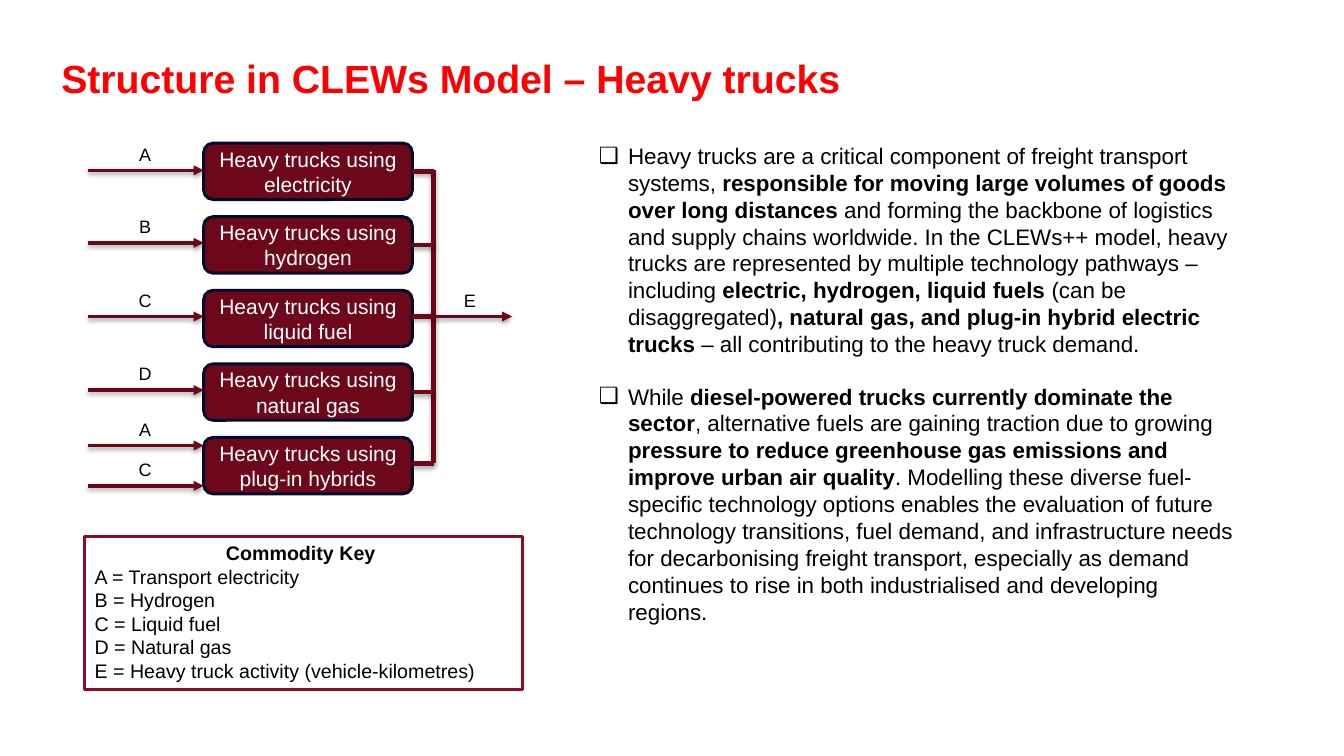
from lxml.etree import SubElement
from pptx import Presentation
from pptx.dml.color import RGBColor
from pptx.enum.shapes import MSO_CONNECTOR as CONN, MSO_SHAPE as SHAPE
from pptx.enum.text import MSO_ANCHOR as ANCHOR, MSO_AUTO_SIZE as FIT, PP_ALIGN as ALIGN
from pptx.oxml.ns import qn
from pptx.util import Pt

PX = 9144
COLORS = {
    "title": "FF0000",
    "text": "000000",
    "white": "FFFFFF",
    "maroon": "6C0819",
    "navy": "000D2C",
    "key": "910C22",
}


def rgb(name):
    return RGBColor.from_string(COLORS[name])


def sub(parent, tag, **attrs):
    return SubElement(parent, qn(tag), attrs)


class Deck:
    font = "Arial"

    def __init__(self, width, height):
        self.prs = Presentation()
        self.prs.slide_width = width * PX
        self.prs.slide_height = height * PX
        self.s = self.prs.slides.add_slide(self.prs.slide_layouts[6])

    def fill_text(self, sp, paragraphs, size, color="text", align=ALIGN.LEFT,
                  anchor=ANCHOR.TOP, inset=10, fit=FIT.NONE):
        tf = sp.text_frame
        tf.word_wrap = True
        tf.auto_size = fit
        tf.vertical_anchor = anchor
        tf.margin_left = tf.margin_right = inset * PX
        tf.margin_top = tf.margin_bottom = 5 * PX
        for i, text in enumerate(paragraphs):
            p = tf.add_paragraph() if i else tf.paragraphs[0]
            p.alignment = align
            for j, part in enumerate(text.split("*")):
                if part:
                    r = p.add_run()
                    r.text = part
                    r.font.name = self.font
                    r.font.size = Pt(size)
                    r.font.bold = j % 2 == 1
                    r.font.color.rgb = rgb(color)
        return tf

    def text(self, x, y, w, h, paragraphs, size, **style):
        sp = self.s.shapes.add_textbox(x * PX, y * PX, w * PX, h * PX)
        return self.fill_text(sp, paragraphs, size, **style)

    def bullets(self, x, y, w, h, paragraphs, size, gap):
        tf = self.text(x, y, w, h, paragraphs, size, fit=FIT.SHAPE_TO_FIT_TEXT)
        for i, p in enumerate(tf.paragraphs):
            pPr = p._p.get_or_add_pPr()
            pPr.set("marL", str(29 * PX))
            pPr.set("indent", str(-29 * PX))
            sub(sub(pPr, "a:buClr"), "a:srgbClr", val=COLORS["text"])
            sub(pPr, "a:buFont", typeface=self.font)
            sub(pPr, "a:buChar", char="❑")
            if i:
                p.space_before = Pt(gap)

    def box(self, kind, x, y, w, h, line, weight, fill=None):
        sp = self.s.shapes.add_shape(kind, x * PX, y * PX, w * PX, h * PX)
        sp.shadow.inherit = False
        if fill:
            sp.fill.solid()
            sp.fill.fore_color.rgb = rgb(fill)
        else:
            sp.fill.background()
        sp.line.color.rgb = rgb(line)
        sp.line.width = Pt(weight)
        return sp

    def line(self, x1, y1, x2, y2, weight=3.21, arrow=False):
        c = self.s.shapes.add_connector(
            CONN.STRAIGHT, x1 * PX, y1 * PX, x2 * PX, y2 * PX)
        c.line.color.rgb = rgb("maroon")
        c.line.width = Pt(weight)
        spPr = c._element.spPr
        if arrow:
            sub(spPr.find(qn("a:ln")), "a:tailEnd", type="triangle")
        effects = sub(spPr, "a:effectLst")
        shadow = sub(effects, "a:outerShdw", blurRad=str(int(Pt(3.4))),
                     dist=str(int(Pt(1.7))), dir="5400000", rotWithShape="0")
        black = sub(shadow, "a:srgbClr", val="000000")
        sub(black, "a:alpha", val="37000")

    def flow(self, x1, x2, y, label, label_x):
        self.line(x1, y, x2, y, weight=2.41, arrow=True)
        self.text(label_x, y - 32, 84, 32, [label], 12.8, align=ALIGN.CENTER,
                  inset=11, fit=FIT.SHAPE_TO_FIT_TEXT)


def main():
    d = Deck(1333, 750)
    tf = d.text(51, 31, 1270, 75, ["*Structure in CLEWs Model – Heavy trucks*"], 28,
                color="title", anchor=ANCHOR.BOTTOM)
    tf.paragraphs[0].line_spacing = 0.9

    d.bullets(584, 136, 658, 495, [
        "Heavy trucks are a critical component of freight transport systems, "
        "*responsible for moving large volumes of goods over long distances* "
        "and forming the backbone of logistics and supply chains worldwide. "
        "In the CLEWs++ model, heavy trucks are represented by multiple "
        "technology pathways – including *electric, hydrogen, liquid fuels *"
        "(can be disaggregated)*, natural gas, and plug-in hybrid electric "
        "trucks* – all contributing to the heavy truck demand.",
        "While *diesel-powered trucks currently dominate the sector*, "
        "alternative fuels are gaining traction due to growing *pressure to "
        "reduce greenhouse gas emissions and improve urban air quality*. "
        "Modelling these diverse fuel-specific technology options enables the "
        "evaluation of future technology transitions, fuel demand, and "
        "infrastructure needs for decarbonising freight transport, especially "
        "as demand continues to rise in both industrialised and developing "
        "regions.",
    ], 16, gap=18.4)

    fuels = ["electricity", "hydrogen", "liquid fuel", "natural gas", "plug-in hybrids"]
    for i, fuel in enumerate(fuels):
        sp = d.box(SHAPE.ROUNDED_RECTANGLE, 202, 142 + 73 * i, 207, 56,
                   "navy", 2.14, fill="maroon")
        d.fill_text(sp, [f"Heavy trucks using {fuel}"], 15, color="white",
                    align=ALIGN.CENTER, anchor=ANCHOR.MIDDLE, inset=11)

    for label, y in zip("ABCDAC", (169, 241, 314, 387, 442, 482)):
        d.flow(87, 202, y, label, 102)

    d.line(430, 169, 430, 459)
    for y in (170, 243, 314, 389, 460):
        d.line(430, y, 409, y)
    d.flow(430, 508, 314, "E", 424)

    key = d.box(SHAPE.RECTANGLE, 84, 532, 434, 152, "key", 2.25)
    tf = d.fill_text(key, [
        "*Commodity Key *",
        "A = Transport electricity",
        "B = Hydrogen",
        "C = Liquid fuel",
        "D = Natural gas",
        "E = Heavy truck activity (vehicle-kilometres)",
    ], 14, fit=FIT.SHAPE_TO_FIT_TEXT)
    tf.paragraphs[0].alignment = ALIGN.CENTER

    d.prs.save("out.pptx")


if __name__ == "__main__":
    main()
